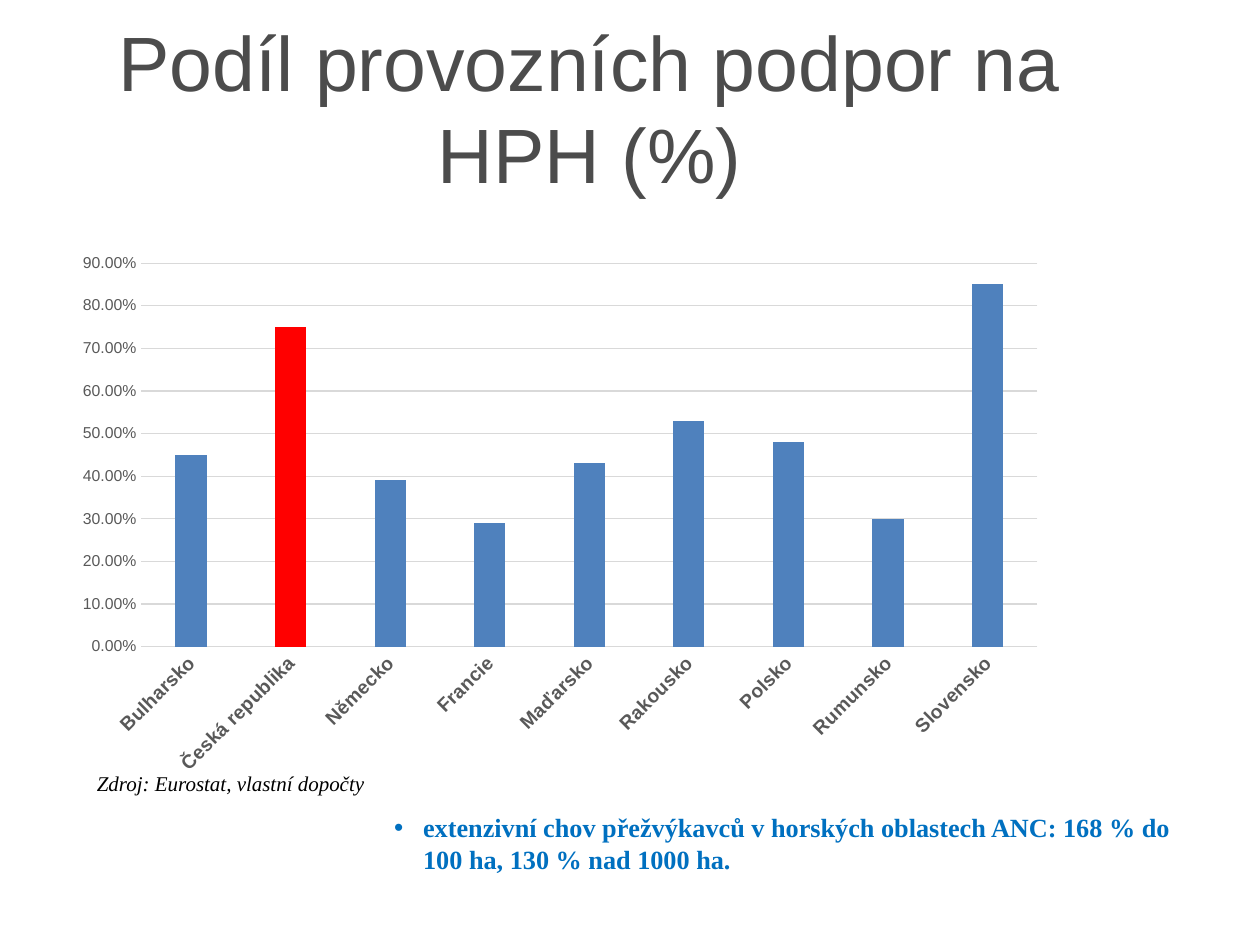
from lxml import etree
from pptx import Presentation
from pptx.chart.data import CategoryChartData
from pptx.dml.color import RGBColor
from pptx.enum.chart import XL_CHART_TYPE as ChartType, XL_TICK_MARK as TickMark
from pptx.enum.text import MSO_ANCHOR as Anchor, MSO_AUTO_SIZE as AutoSize, PP_ALIGN as Align
from pptx.oxml.ns import qn
from pptx.util import Inches, Pt

SANS, SERIF = "Arial", "Times New Roman"
GRID, LABEL = "D9D9D9", "595959"
SHARES = {
    "Bulharsko": 0.45,
    "Česká republika": 0.75,
    "Německo": 0.39,
    "Francie": 0.29,
    "Maďarsko": 0.43,
    "Rakousko": 0.53,
    "Polsko": 0.48,
    "Rumunsko": 0.3,
    "Slovensko": 0.85,
}
HIGHLIGHTED = "Česká republika"


def color(value):
    return RGBColor.from_string(value)


def format_font(font, size, name, fill, bold=False, italic=False):
    font.size, font.name, font.bold, font.italic = Pt(size), name, bold, italic
    font.color.rgb = color(fill)


def place(shape, left, top, width, height):
    shape.left, shape.top = Inches(left), Inches(top)
    shape.width, shape.height = Inches(width), Inches(height)


def write_text(frame, text, align=Align.LEFT, spacing=None, **font_format):
    para = frame.paragraphs[0]
    para.alignment = align
    if spacing:
        para.line_spacing = Pt(spacing)
    span = para.add_run()
    span.text = text
    format_font(span.font, **font_format)


def add_bullet(para, indent):
    properties = para._p.get_or_add_pPr()
    properties.set("marL", str(Inches(indent)))
    properties.set("indent", str(-Inches(indent)))
    etree.SubElement(properties, qn("a:buFont")).set("typeface", SANS)
    etree.SubElement(properties, qn("a:buChar")).set("char", "•")


def add_text_box(slide, bounds, wrap=True):
    box = slide.shapes.add_textbox(*map(Inches, bounds))
    box.text_frame.word_wrap = wrap
    box.text_frame.auto_size = AutoSize.SHAPE_TO_FIT_TEXT
    return box.text_frame


def draw_line(line, fill):
    line.color.rgb = color(fill)
    line.width = Pt(0.75)


def format_axes(chart):
    countries, shares = chart.category_axis, chart.value_axis
    for axis in (countries, shares):
        axis.major_tick_mark = axis.minor_tick_mark = TickMark.NONE
    format_font(countries.tick_labels.font, 11, SANS, LABEL, bold=True)
    format_font(shares.tick_labels.font, 9, SANS, LABEL)
    draw_line(countries.format.line, GRID)
    label_body = countries._element.find(qn("c:txPr")).find(qn("a:bodyPr"))
    label_body.set("rot", str(-45 * 60000))
    label_body.set("vert", "horz")

    shares.minimum_scale, shares.maximum_scale, shares.major_unit = 0, 0.9, 0.1
    shares.format.line.fill.background()
    draw_line(shares.major_gridlines.format.line, GRID)
    shares.tick_labels.number_format = "0.00%"
    shares.tick_labels.number_format_is_linked = False


def add_share_chart(slide, bounds):
    data = CategoryChartData(number_format="0.00%")
    data.categories = list(SHARES)
    data.add_series("Series 1", list(SHARES.values()))
    chart = slide.shapes.add_chart(
        ChartType.COLUMN_CLUSTERED, *map(Inches, bounds), data).chart
    chart.has_legend = chart.has_title = False
    format_font(chart.font, 10, SANS, "000000")
    format_axes(chart)

    plot = chart.plots[0]
    plot.gap_width, plot.overlap, plot.vary_by_categories = 219, -27, False
    columns = plot.series[0]
    highlight = columns.points[list(SHARES).index(HIGHLIGHTED)]
    for element, fill in ((columns, "4F81BD"), (highlight, "FF0000")):
        element.format.fill.solid()
        element.format.fill.fore_color.rgb = color(fill)


def main():
    deck = Presentation()
    deck.slide_width, deck.slide_height = Inches(10), Inches(7.5)
    slide = deck.slides.add_slide(deck.slide_layouts[5])

    title = slide.shapes.title
    place(title, 0.37, 0.3, 8.62, 1.09)
    title.text_frame.auto_size = AutoSize.NONE
    title.text_frame.vertical_anchor = Anchor.MIDDLE
    write_text(title.text_frame, "Podíl provozních podpor na HPH (%)",
               align=Align.CENTER, size=44, name=SANS, fill="4C4C4C")

    add_share_chart(slide, (0.5, 1.93, 7.89, 4.3))

    source = add_text_box(slide, (0.67, 6.08, 2.35, 0.3), wrap=False)
    write_text(source, "Zdroj: Eurostat, vlastní dopočty", align=Align.JUSTIFY,
               spacing=13.5, size=12, name=SERIF, fill="000000", italic=True)

    remark = add_text_box(slide, (3.03, 6.39, 6.58, 0.91))
    add_bullet(remark.paragraphs[0], 0.23)
    write_text(remark, "extenzivní chov přežvýkavců v horských oblastech ANC: "
               "168 % do 100 ha, 130 % nad 1000 ha.",
               size=15, name=SERIF, fill="0070C0", bold=True)

    deck.save("out.pptx")


if __name__ == "__main__":
    main()
